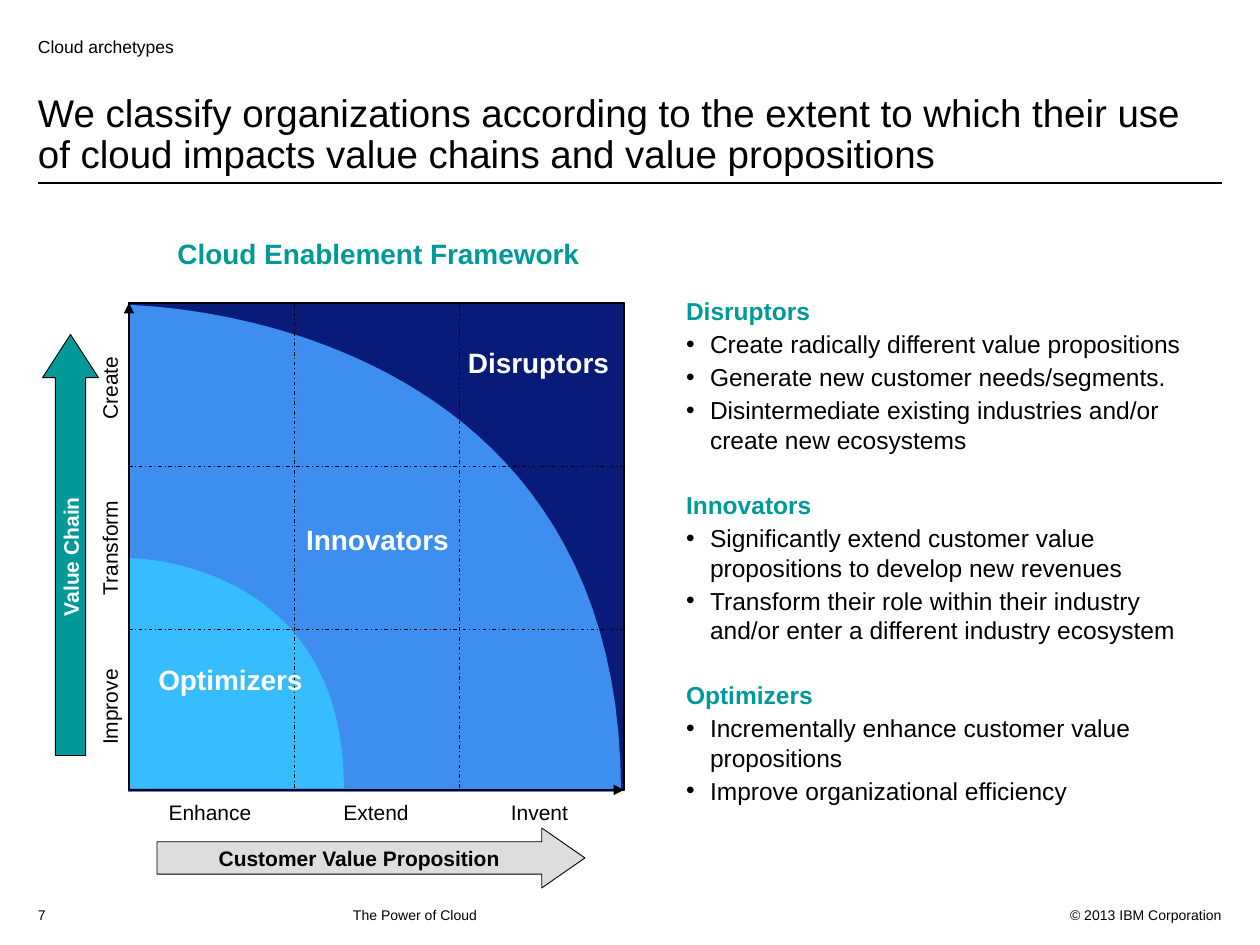
from dataclasses import dataclass

from lxml.etree import SubElement
from pptx import Presentation
from pptx.dml.color import RGBColor
from pptx.enum.dml import MSO_LINE
from pptx.enum.shapes import MSO_CONNECTOR, MSO_SHAPE
from pptx.enum.text import MSO_ANCHOR, MSO_AUTO_SIZE, PP_ALIGN
from pptx.oxml.ns import qn
from pptx.util import Pt


@dataclass(frozen=True)
class Theme:
    """Colours and type sizes of the slide."""
    font: str = "Arial"
    black: str = "000000"
    white: str = "FFFFFF"
    teal: str = "009999"
    navy: str = "081B78"
    blue: str = "3D8EEF"
    sky: str = "37BCFF"
    grey: str = "DDDDDD"
    footer: int = 8
    eyebrow: int = 10
    label: int = 12
    body: int = 14
    heading: int = 16
    title: int = 22
    hairline: float = 0.5
    rule: float = 0.75
    frame: float = 1.5


THEME = Theme()


def emu(px):
    """Turn px (126 to the inch) into EMU."""
    return round(px * 914400 / 126)


def write(para, text, *, size, color=THEME.black, bold=False, align=PP_ALIGN.LEFT,
          before=0, spacing=1.0, margin=0, indent=0, bullet=None):
    """Write one formatted paragraph."""
    para.alignment, para.line_spacing, para.space_before = align, spacing, Pt(before)
    properties = para._p.get_or_add_pPr()
    properties.set("marL", str(emu(margin)))
    properties.set("indent", str(emu(indent)))
    if bullet:
        SubElement(properties, qn("a:buFont"), typeface=THEME.font)
        SubElement(properties, qn("a:buChar"), char=bullet)
    else:
        SubElement(properties, qn("a:buNone"))
    span = para.add_run()
    span.text = text
    span.font.name, span.font.size, span.font.bold = THEME.font, Pt(size), bold
    span.font.color.rgb = RGBColor.from_string(color)


class Painter:
    """Draws each kind of element on the current slide."""

    def __init__(self, page, theme):
        self.page, self.theme = page, theme

    def place(self, box, bounds):
        """Move a box to its bounds."""
        box.left, box.top, box.width, box.height = map(emu, bounds)

    def frame(self, box, anchor=MSO_ANCHOR.TOP, inset=(13, 6), wrap=True):
        """Set up the text frame of a box."""
        frame = box.text_frame
        frame.word_wrap, frame.auto_size = wrap, MSO_AUTO_SIZE.NONE
        frame.vertical_anchor = anchor
        frame.margin_left = frame.margin_right = emu(inset[0])
        frame.margin_top = frame.margin_bottom = emu(inset[1])
        return frame

    def paint(self, shape, fill=None, line=None):
        """Set the fill and outline of a shape."""
        shape.shadow.inherit = False
        if fill:
            shape.fill.solid()
            shape.fill.fore_color.rgb = RGBColor.from_string(fill)
        else:
            shape.fill.background()
        if line:
            shape.line.color.rgb = RGBColor.from_string(self.theme.black)
            shape.line.width = Pt(line)
        else:
            shape.line.fill.background()

    def holder(self, index, bounds, text, anchor=MSO_ANCHOR.BOTTOM, inset=(13, 6), **style):
        """Fill a one-paragraph placeholder."""
        box = self.page.placeholders[index]
        self.place(box, bounds)
        write(self.frame(box, anchor, inset).paragraphs[0], text, **style)

    def listing(self, index, bounds, heading, items):
        """Fill a placeholder with a heading and bullets."""
        box = self.page.placeholders[index]
        self.place(box, bounds)
        frame = self.frame(box, inset=(6, 6))
        style = dict(size=self.theme.body, margin=24, indent=-24)
        write(frame.paragraphs[0], heading, color=self.theme.teal, bold=True, **style)
        for item in items:
            write(frame.add_paragraph(), item, before=2.1, bullet="•", **style)

    def text(self, bounds, text, **style):
        """Add a text box."""
        box = self.page.shapes.add_textbox(*map(emu, bounds))
        write(self.frame(box).paragraphs[0], text, **style)

    def shape(self, kind, bounds, text=None, fill=None, line=None, rotation=0,
              adjust=(), anchor=MSO_ANCHOR.MIDDLE, wrap=True, **style):
        """Add a preset shape, with centred text if given."""
        shape = self.page.shapes.add_shape(kind, *map(emu, bounds))
        shape.rotation = rotation
        for number, value in enumerate(adjust):
            shape.adjustments[number] = value
        self.paint(shape, fill, line)
        if text:
            frame = self.frame(shape, anchor, wrap=wrap)
            write(frame.paragraphs[0], text, align=PP_ALIGN.CENTER, **style)

    def quadrant(self, left, top, right, bottom, fill, steps=48):
        """Add a region bounded by a curve from top left to bottom right."""
        points = [(left, bottom), (left, top)]
        for step in range(1, steps + 1):
            t = step / steps
            pull = 3 * t ** 2 * (1 - t) + t ** 3
            points.append((left + (right - left) * pull, top + (bottom - top) * t ** 3))
        builder = self.page.shapes.build_freeform(emu(right), emu(bottom))
        builder.add_line_segments([(emu(x), emu(y)) for x, y in points])
        self.paint(builder.convert_to_shape(), fill)

    def line(self, start, end, width, dash=None, arrow=False):
        """Add a straight line or arrow."""
        line = self.page.shapes.add_connector(
            MSO_CONNECTOR.STRAIGHT, *map(emu, (*start, *end)))
        line.line.color.rgb = RGBColor.from_string(self.theme.black)
        line.line.width = Pt(width)
        if dash:
            line.line.dash_style = dash
        if arrow:
            SubElement(line.line._get_or_add_ln(), qn("a:tailEnd"), type="triangle")
        SubElement(line._element.spPr, qn("a:effectLst"))


def main():
    """Build the slide and save it."""
    deck = Presentation()
    deck.slide_width, deck.slide_height = emu(1260), emu(945)
    painter = Painter(deck.slides.add_slide(deck.slide_layouts[4]), THEME)

    painter.line((38, 183), (1222, 183), THEME.rule)
    painter.text((1046, 901, 189, 25), "© 2013 IBM Corporation",
                 size=THEME.footer, align=PP_ALIGN.RIGHT)
    painter.text((25, 901, 50, 25), "7", size=THEME.footer)
    painter.text((214, 901, 819, 25), "The Power of Cloud", size=THEME.footer, margin=126)
    painter.holder(0, (25, 71, 1210, 112),
                   "We classify organizations according to the extent to which their use "
                   "of cloud impacts value chains and value propositions",
                   size=THEME.title, spacing=0.9)
    painter.holder(1, (25, 38, 1109, 19), "Cloud archetypes", inset=(13, 0), size=THEME.eyebrow)
    painter.listing(2, (680, 290, 523, 173), "Disruptors", (
        "Create radically different value propositions",
        "Generate new customer needs/segments.",
        "Disintermediate existing industries and/or create new ecosystems"))
    painter.listing(3, (680, 484, 504, 169), "Innovators", (
        "Significantly extend customer value propositions to develop new revenues",
        "Transform their role within their industry and/or enter a different industry ecosystem"))
    painter.listing(4, (680, 674, 504, 139), "Optimizers", (
        "Incrementally enhance customer value propositions",
        "Improve organizational efficiency"))

    left, top, right, bottom = 129, 303, 624, 790
    square = (left, top, right - left, bottom - top)
    painter.shape(MSO_SHAPE.RECTANGLE, square, fill=THEME.navy, line=THEME.frame)
    painter.quadrant(125, 305, 621, 792, THEME.blue)
    painter.quadrant(129, 558, 344, 788, THEME.sky)

    label = dict(fill=THEME.white, size=THEME.label)
    for text, middle in (("Improve", 707), ("Transform", 548), ("Create", 388)):
        painter.shape(MSO_SHAPE.RECTANGLE, (21, middle - 15, 184, 30), text,
                      rotation=270, anchor=MSO_ANCHOR.BOTTOM, **label)
    for third in (1, 2):
        x, y = left + 165 * third, top + 163 * third
        painter.line((x, top), (x, bottom), THEME.hairline, MSO_LINE.DASH_DOT)
        painter.line((left, y), (right, y), THEME.hairline, MSO_LINE.DASH_DOT)
    for text, x, width in (("Enhance", 125, 170), ("Extend", 286, 180), ("Invent", 455, 169)):
        painter.shape(MSO_SHAPE.RECTANGLE, (x, 794, width, 33), text,
                      anchor=MSO_ANCHOR.TOP, **label)

    painter.shape(MSO_SHAPE.RECTANGLE, square, line=THEME.frame)
    for end in ((left, top), (right, bottom)):
        painter.line((left, bottom), end, THEME.frame, arrow=True)

    arrow = dict(line=THEME.hairline, size=THEME.label, bold=True, wrap=False)
    painter.shape(MSO_SHAPE.RIGHT_ARROW, (-140, 517, 421, 56), "Value Chain", rotation=270,
                  fill=THEME.teal, color=THEME.white, adjust=(0.54, 0.77), **arrow)
    painter.shape(MSO_SHAPE.RIGHT_ARROW, (157, 828, 428, 60), "Customer Value Proposition",
                  fill=THEME.grey, adjust=(0.54, 0.72), **arrow)

    for text, x, y in (("Optimizers", 139, 655), ("Disruptors", 447, 338),
                       ("Innovators", 286, 515)):
        painter.shape(MSO_SHAPE.ROUNDED_RECTANGLE, (x, y, 183, 49), text,
                      size=THEME.heading, color=THEME.white, bold=True)
    painter.text((120, 231, 517, 47), "Cloud Enablement Framework", size=THEME.heading,
                 color=THEME.teal, bold=True, align=PP_ALIGN.CENTER)

    deck.save("out.pptx")


if __name__ == "__main__":
    main()
